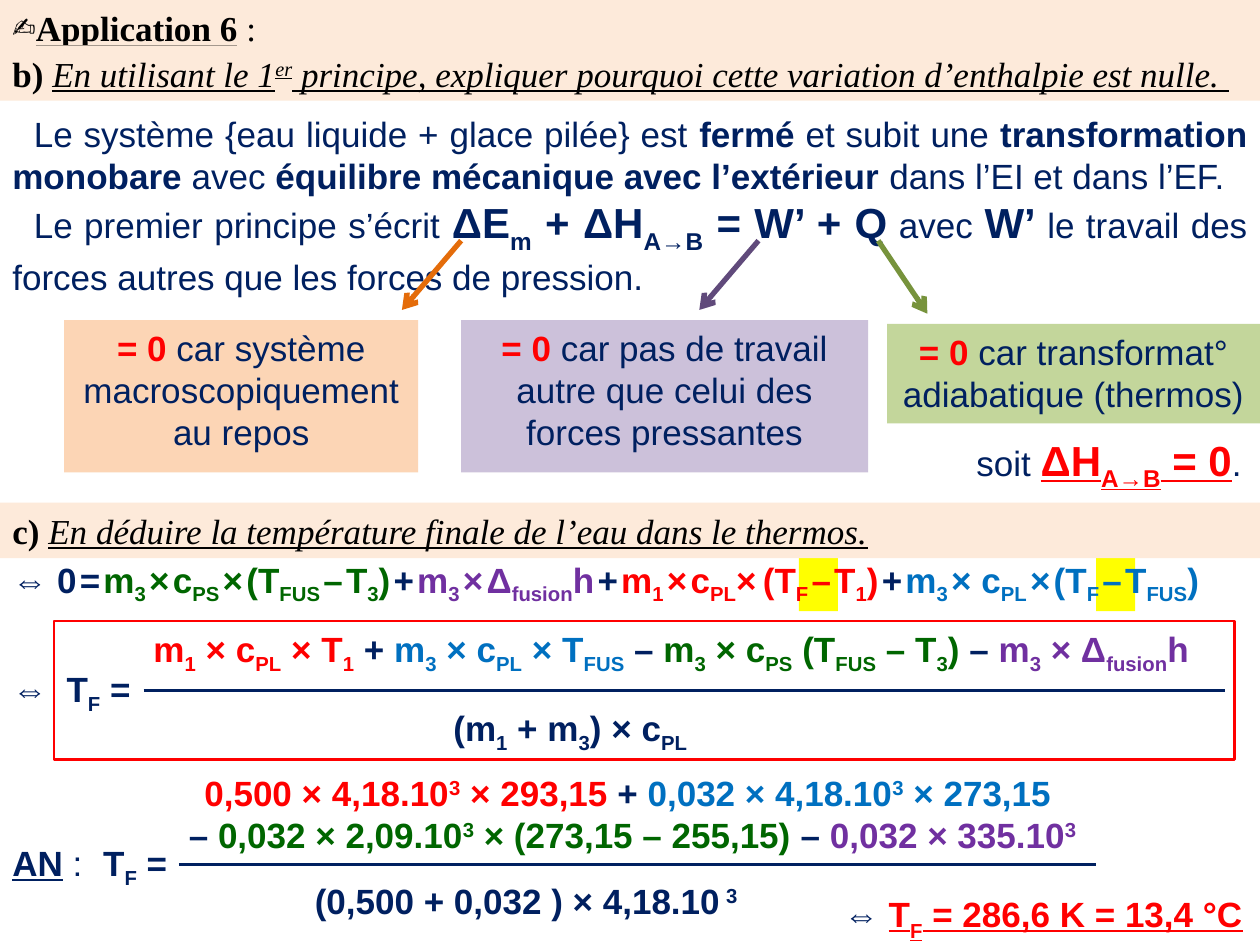
from lxml.etree import SubElement
from pptx import Presentation
from pptx.dml.color import RGBColor
from pptx.enum.shapes import MSO_CONNECTOR, MSO_SHAPE
from pptx.enum.text import MSO_ANCHOR, MSO_AUTO_SIZE, PP_ALIGN
from pptx.oxml.ns import qn
from pptx.util import Inches, Pt

BLACK = RGBColor(0, 0, 0)
NAVY = RGBColor(0x00, 0x20, 0x60)
RED = RGBColor(0xFF, 0, 0)
GREEN = RGBColor(0x00, 0x66, 0x00)
BLUE = RGBColor(0x00, 0x70, 0xC0)
PURPLE = RGBColor(0x70, 0x30, 0xA0)
YELLOW = RGBColor(0xFF, 0xFF, 0)
CREAM = RGBColor(0xFD, 0xEA, 0xDA)
PEACH = RGBColor(0xFC, 0xD5, 0xB5)
LILAC = RGBColor(0xCC, 0xC1, 0xDA)
LIME = RGBColor(0xC3, 0xD6, 0x9B)
ORANGE = RGBColor(0xE4, 0x6C, 0x0A)
VIOLET = RGBColor(0x60, 0x4A, 0x7B)
OLIVE = RGBColor(0x77, 0x93, 0x3C)


def write(par, parts, face="Arial", drop=-25):
    """Add (text, ink, style) parts; style letters: b, i, u, L (large).

    "|" splits a text; _ lowers a piece, ^ raises it, each ~ is a thin gap.
    """
    for text, ink, style in parts:
        for piece in text.split("|"):
            mark = piece[:1]
            gap = mark == "~"
            run = par.add_run()
            run.text = " " if gap else piece.lstrip("_^")
            look = {
                "name": "Calibri" if gap else face,
                "size": Pt(8 * len(piece) if gap else 24 if "L" in style else 20),
                "bold": "b" in style and not gap,
                "italic": "i" in style,
                "underline": "u" in style,
            }
            for key, value in look.items():
                setattr(run.font, key, value)
            run.font.color.rgb = ink
            if mark in ("_", "^"):
                level = drop if mark == "_" else 30
                run._r.get_or_add_rPr().set("baseline", str(level * 1000))


def fill(shape, pars, align=PP_ALIGN.LEFT, mid=False, grow=False, wrap=True, **style):
    frame = shape.text_frame
    frame.word_wrap = wrap
    frame.vertical_anchor = MSO_ANCHOR.MIDDLE if mid else MSO_ANCHOR.TOP
    frame.auto_size = MSO_AUTO_SIZE.SHAPE_TO_FIT_TEXT if grow else MSO_AUTO_SIZE.NONE
    for i, parts in enumerate(pars):
        par = frame.add_paragraph() if i else frame.paragraphs[0]
        par.alignment = align
        write(par, parts, **style)
    return frame


def block(slide, box, paint=None, edge=None):
    shape = slide.shapes.add_shape(MSO_SHAPE.RECTANGLE, *map(Inches, box))
    shape.shadow.inherit = False
    if paint is None:
        shape.fill.background()
    else:
        shape.fill.solid()
        shape.fill.fore_color.rgb = paint
    if edge is None:
        shape.line.fill.background()
    else:
        shape.line.color.rgb = edge
        shape.line.width = Pt(1.5)
    return shape


def label(slide, box, *pars, **style):
    return fill(slide.shapes.add_textbox(*map(Inches, box)), pars, **style)


def rule(slide, start, end, ink, width=1.5, arrow=False):
    line = slide.shapes.add_connector(MSO_CONNECTOR.STRAIGHT, *map(Inches, start + end))
    line.line.color.rgb = ink
    line.line.width = Pt(width)
    if arrow:
        SubElement(line.line._get_or_add_ln(), qn("a:tailEnd"), type="arrow")
    SubElement(line._element.spPr, qn("a:effectLst"))


def banner(slide, top, parts, bullet=None):
    frame = fill(block(slide, (0, top, 10, 0.44), CREAM), [parts], PP_ALIGN.JUSTIFY,
                 mid=True, grow=True, face="Times New Roman")
    if bullet:
        SubElement(frame.paragraphs[0]._p.get_or_add_pPr(), qn("a:buChar"), char=bullet)


def premise(slide, box):
    frame = label(
        slide, box,
        [("Le système {eau liquide + glace pilée} est ", NAVY, ""), ("fermé", NAVY, "b"),
         (" et subit une ", NAVY, ""), ("transformation monobare ", NAVY, "b"),
         ("avec ", NAVY, ""), ("équilibre mécanique avec l’extérieur", NAVY, "b"),
         (" dans l’EI et dans l’EF.", NAVY, "")],
        [("Le premier principe s’écrit ", NAVY, ""),
         ("ΔE|_m| + ΔH|_A→B| = W’ + Q", NAVY, "bL"), (" avec ", NAVY, ""),
         ("W’", NAVY, "bL"),
         (" le travail des forces autres que les forces de pression.", NAVY, "")],
        align=PP_ALIGN.JUSTIFY, drop=-30)
    for par in frame.paragraphs:
        par._p.get_or_add_pPr().set("indent", str(Inches(0.17)))


def reasons(slide, top):
    cases = [
        (0.51, 0, 2.81, 1.21, PEACH, " car système macroscopiquement au repos"),
        (3.66, 0, 3.23, 1.21, LILAC,
         " car pas de travail autre que celui des forces pressantes"),
        (7.04, 0.03, 2.96, 0.79, LIME, " car transformat° adiabatique (thermos)"),
    ]
    for left, down, wide, high, paint, text in cases:
        fill(block(slide, (left, top + down, wide, high), paint),
             [[("= 0", RED, "b"), (text, NAVY, "")]], PP_ALIGN.CENTER)
    arrows = [(3.66, 3.19, -0.08, ORANGE), (6.02, 5.55, -0.08, VIOLET),
              (6.97, 7.36, -0.05, OLIVE)]
    for start, end, down, ink in arrows:
        rule(slide, (start, top - 0.63), (end, top + down), ink, 3, True)
    label(slide, (7.65, top + 0.86, 2.35, 0.5),
          [("soit ", NAVY, ""), ("ΔH|_A→B| = 0", RED, "buL"), (".", NAVY, "")],
          grow=True, wrap=False)


def balance(slide, box):
    label(slide, box, [
        ("⇔ ", NAVY, ""), ("0|~|=|~", NAVY, "b"),
        ("m|_3|~|×|~|c|_PS|~|×|~|(T|_FUS|~|–|~|T|_3|)|~", GREEN, "b"),
        ("+|~", NAVY, "b"), ("m|_3|~|×|~|Δ|_fusion|h|~", PURPLE, "b"),
        ("+|~", NAVY, "b"),
        ("m|_1|~|×|~|c|_PL|×|~~|(T|_F|~|–|~|T|_1|)|~", RED, "b"),
        ("+|~", NAVY, "b"),
        ("m|_3|~|× c|_PL|~|×|~|(T|_F|~|–|~|T|_FUS|)", BLUE, "b")])


def ratio(slide, left, right, bar, lead, stop, over, under):
    """Draw a fraction; over and under are (left, shift from bar, width, paragraphs)."""
    frame = label(slide, (0, bar - 0.23, 1.5, 0.39), lead + [("\tT|_F| =", NAVY, "b")])
    tabs = SubElement(frame.paragraphs[0]._p.get_or_add_pPr(), qn("a:tabLst"))
    SubElement(tabs, qn("a:tab"), pos=str(Inches(stop)), algn="l")
    rule(slide, (left, bar), (right, bar), NAVY)
    for (x, shift, wide, pars), align in ((over, PP_ALIGN.CENTER), (under, PP_ALIGN.LEFT)):
        label(slide, (x, bar + shift, wide, 0.4), *pars,
              align=align if len(pars) > 1 else PP_ALIGN.LEFT)


def formula(slide, box):
    x, y, wide, high = box
    top = [("m|_1| × c|_PL| × T|_1", RED, "b"), (" + ", NAVY, "b"),
           ("m|_3| × c|_PL| × T|_FUS", BLUE, "b"), (" – ", NAVY, "b"),
           ("m|_3| × c|_PS| (T|_FUS| – T|_3|) ", GREEN, "b"), ("– ", NAVY, "b"),
           ("m|_3| × Δ|_fusion|h", PURPLE, "b")]
    low = [("(m|_1| + m|_3|) × c|_PL", NAVY, "b")]
    ratio(slide, x + 0.71, x + wide - 0.08, y + high / 2, [("⇔", NAVY, "")], 0.43,
          (x + 0.69, -0.55, 8.7, [top]), (x + 3.07, 0.08, 3.77, [low]))
    block(slide, box, edge=RED)


def result(slide, bar):
    top = [("0,500 × 4,18.10|^3| × 293,15 ", RED, "b"), ("+ ", NAVY, "b"),
           ("0,032 × 4,18.10|^3| × 273,15 ", BLUE, "b")]
    more = [("– ", NAVY, "b"), ("0,032 × 2,09.10|^3| × (273,15 – 255,15) ", GREEN, "b"),
            ("– ", NAVY, "b"), ("0,032 × 335.10|^3", PURPLE, "b")]
    low = [("(0,500 + 0,032 ) × 4,18.10|^ 3", NAVY, "b")]
    ratio(slide, 1.42, 8.7, bar, [("AN", NAVY, "bu"), (" :", NAVY, "")], 0.72,
          (0.75, -0.79, 8.54, [top, more]), (2.4, 0.07, 5.28, [low]))
    label(slide, (6.6, bar + 0.2, 3.4, 0.44),
          [("⇔ ", NAVY, ""), ("T|_F| = 286,6 K = 13,4 °C", RED, "bu")],
          mid=True, grow=True, wrap=False, drop=-30)


def main():
    deck = Presentation()
    deck.slide_width, deck.slide_height = Inches(10), Inches(7.5)
    slide = deck.slides.add_slide(deck.slide_layouts[6])
    for left in (6.34, 8.7):
        block(slide, (left, 4.3, 0.31, 0.55), YELLOW)
    banner(slide, 0, [("Application 6", BLACK, "bu"), (" ", BLACK, "b"),
                      (":", BLACK, "")], "✍")
    banner(slide, 0.36, [
        ("b) ", BLACK, "b"),
        ("En utilisant le 1|^er| principe, expliquer pourquoi cette variation "
         "d’enthalpie est nulle. ", BLACK, "iu")])
    premise(slide, (0, 0.84, 10, 0.57))
    reasons(slide, 2.54)
    banner(slide, 3.99, [
        ("c) ", BLACK, "b"),
        ("En déduire la température finale de l’eau dans le thermos.", BLACK, "iu")])
    balance(slide, (0, 4.38, 10, 0.47))
    formula(slide, (0.43, 4.93, 9.37, 1.1))
    result(slide, 6.86)
    deck.save("out.pptx")


if __name__ == "__main__":
    main()
